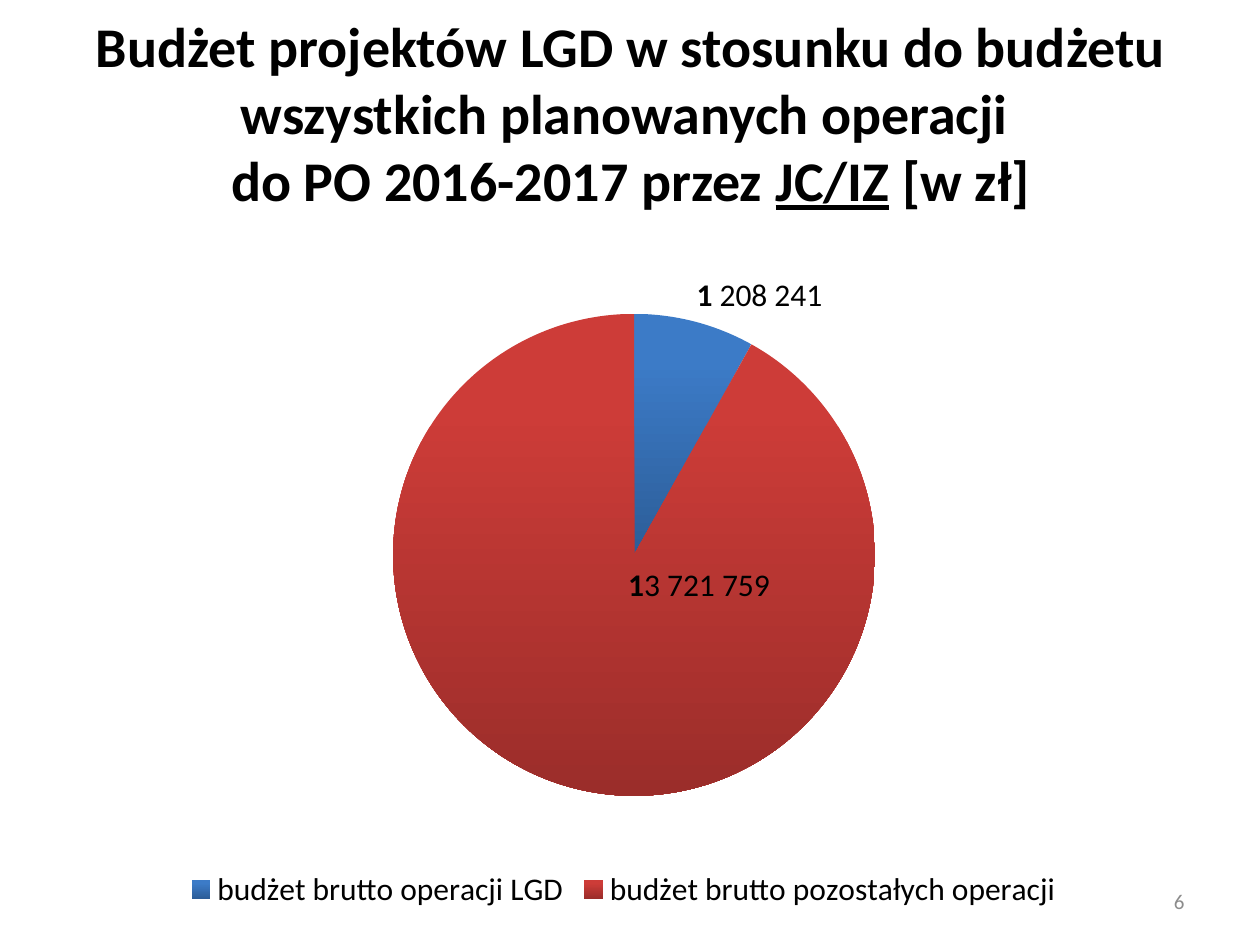
from typing import NamedTuple

from lxml.etree import SubElement
from pptx import Presentation
from pptx.chart.data import CategoryChartData
from pptx.dml.color import RGBColor
from pptx.enum.chart import XL_CHART_TYPE, XL_LABEL_POSITION, XL_LEGEND_POSITION
from pptx.enum.text import MSO_ANCHOR, PP_ALIGN
from pptx.oxml.ns import qn
from pptx.util import Cm, Pt

FONT = "Calibri"
COLORS = {
    "black": "000000",
    "grey": "8C8C8C",
    "blue": "3C7BC7",
    "navy": "2C5D98",
    "red": "CD3C38",
    "wine": "9B2D2A",
}


class Run(NamedTuple):
    text: str
    bold: bool = False
    under: bool = False


class Slice(NamedTuple):
    name: str
    value: int
    label: str
    top: str
    base: str
    place: XL_LABEL_POSITION
    shift: tuple[float, float] = (0, 0)


SLICES = [
    Slice("budżet brutto operacji LGD", 1208241, "1 208 241",
          "blue", "navy", XL_LABEL_POSITION.OUTSIDE_END),
    Slice("budżet brutto pozostałych operacji", 13721759, "13 721 759",
          "red", "wine", XL_LABEL_POSITION.CENTER, (0.09, -0.13)),
]


def style(font, size: float, color: str, bold: bool = False) -> None:
    font.name, font.size, font.bold = FONT, Pt(size), bold
    font.color.rgb = RGBColor.from_string(COLORS[color])


def write(frame, lines: list[list[Run]], *, size: float, color: str = "black",
          align: PP_ALIGN = PP_ALIGN.CENTER) -> None:
    """Fill one paragraph, with a line break between lines."""
    para = frame.paragraphs[0]
    para.alignment = align
    for i, line in enumerate(lines):
        if i:
            para.add_line_break()
        for part in line:
            run = para.add_run()
            run.text = part.text
            style(run.font, size, color, part.bold)
            if part.under:
                run.font.underline = True


def add_text(slide, box: tuple, lines: list[list[Run]], **form) -> None:
    frame = slide.shapes.add_textbox(*map(Cm, box)).text_frame
    frame.word_wrap = True
    frame.vertical_anchor = MSO_ANCHOR.MIDDLE
    write(frame, lines, **form)


def set_layout(node, **vals) -> None:
    """Put a manual layout into a c:layout element."""
    for child in list(node):
        node.remove(child)
    manual = SubElement(node, qn("c:manualLayout"))
    for tag, val in vals.items():
        SubElement(manual, qn(f"c:{tag}")).set("val", str(val))


def paint(point, part: Slice) -> None:
    fill = point.format.fill
    fill.gradient()
    fill.gradient_angle = 270
    for stop, key, pos in zip(fill.gradient_stops, (part.top, part.base), (0.2, 1)):
        stop.color.rgb = RGBColor.from_string(COLORS[key])
        stop.position = pos
    point.format.line.fill.background()


def add_label(point, part: Slice) -> None:
    label = point.data_label
    runs = [Run(part.label[0], bold=True), Run(part.label[1:])]
    write(label.text_frame, [runs], size=18)
    label.position = part.place
    if any(part.shift):
        rich = label.text_frame._txBody
        tx = rich.getparent()
        node = SubElement(tx.getparent(), qn("c:layout"))
        tx.addprevious(node)
        set_layout(node, x=part.shift[0], y=part.shift[1])


def add_pie(slide, box: tuple, parts: list[Slice]) -> None:
    data = CategoryChartData(number_format="# ##0")
    data.categories = [part.name for part in parts]
    data.add_series("Series 1", [part.value for part in parts])
    chart = slide.shapes.add_chart(XL_CHART_TYPE.PIE, *map(Cm, box), data).chart
    style(chart.font, 18, "black")
    chart.has_title = False
    chart.has_legend = True
    chart.legend.position = XL_LEGEND_POSITION.BOTTOM
    chart.legend.include_in_layout = False

    # Plot area
    plot = chart.plots[0]
    plot.vary_by_categories = True
    area = plot._element.getparent()
    node = area.find(qn("c:layout"))
    if node is None:
        node = SubElement(area, qn("c:layout"))
        area.insert(0, node)
    set_layout(node, layoutTarget="inner", xMode="edge", yMode="edge",
               x=0.28, y=0.09, w=0.46, h=0.73)

    # Slices and their labels
    tags = plot.series[0].data_labels
    tags.show_value = True
    style(tags.font, 18, "black", bold=True)
    for i, part in enumerate(parts):
        point = plot.series[0].points[i]
        paint(point, part)
        add_label(point, part)


def main() -> None:
    deck = Presentation()
    deck.slide_width, deck.slide_height = Cm(25.4), Cm(19.05)
    slide = deck.slides.add_slide(deck.slide_layouts[6])

    # Title
    add_text(slide, (0.51, 0, 24.41, 4.52), [
        [Run("Budżet projektów LGD w stosunku do budżetu wszystkich "
             "planowanych operacji ", bold=True)],
        [Run("do PO 2016-2017 przez ", bold=True),
         Run("JC/IZ", bold=True, under=True),
         Run(" [w zł]", bold=True)],
    ], size=32)

    # Budget chart
    add_pie(slide, (1.9, 5.13, 21.34, 13.31), SLICES)

    # Slide number
    add_text(slide, (18.21, 17.65, 5.92, 1.02), [[Run("6")]],
             size=12, color="grey", align=PP_ALIGN.RIGHT)

    deck.save("out.pptx")


if __name__ == "__main__":
    main()
